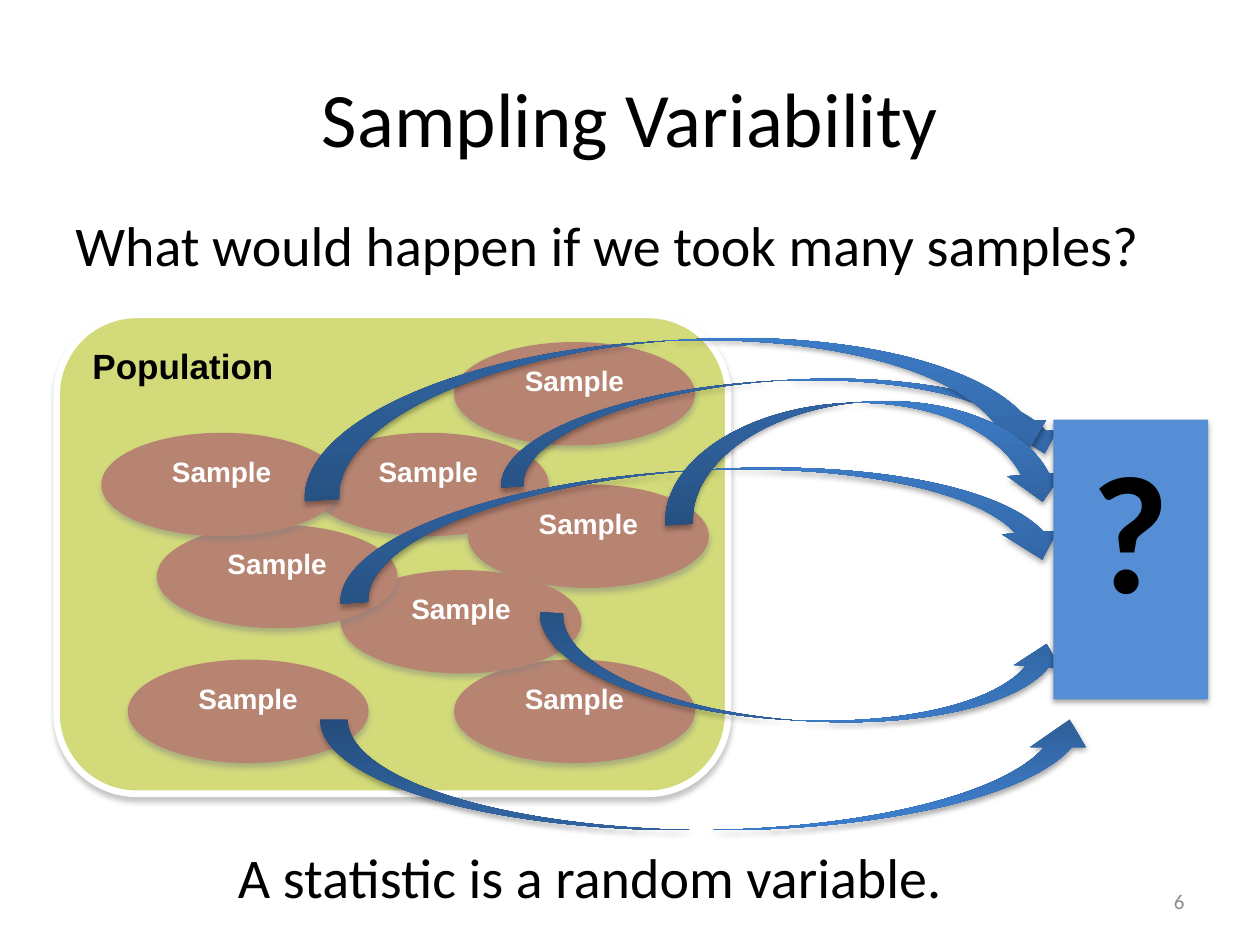
from copy import deepcopy

from lxml.etree import SubElement
from pptx import Presentation
from pptx.dml.color import RGBColor
from pptx.enum.shapes import MSO_SHAPE as SHAPE
from pptx.enum.text import MSO_ANCHOR as ANCHOR, MSO_AUTO_SIZE as AUTO, PP_ALIGN as ALIGN
from pptx.oxml.ns import qn
from pptx.util import Inches, Pt

BLACK, WHITE, CLAY = "000000", "FFFFFF", "B88472"
SOFT_SHADOW = ("808080", 45, 3, 2.4)
DARK_SHADOW = (BLACK, 35, 3.1, 1.8)
ARROW_STOPS = [(0, "2F5F99"), (0.8, "3D7CC7"), (1, "3A7CCB")]
SAMPLES = [(2.45, 3.44), (3.72, 3.85), (3.61, 5.24), (3.61, 2.72),
           (2.71, 4.53), (1.25, 4.17), (1.02, 5.24), (0.81, 3.44)]
ARROWS = [
    ((3.95, 3.02, 4.5, 0.71), -3.6, False),
    ((4.26, 4.99, 4.21, 0.73), 3.6, True),
    ((2.67, 3.73, 5.8, 0.88), -3.6, False),
    ((2.38, 2.7, 6, 1.09), -3.6, False),
    ((2.54, 5.71, 6.17, 0.88), 0, True),
    ((5.25, 3.19, 3.22, 0.88), -3.6, False),
]


def rgb(value):
    return RGBColor.from_string(value)


class Deck:
    """Holds the style and the current slide."""

    def __init__(self, slide, body_font="Calibri", diagram_font="Arial"):
        self.slide = slide
        self.body_font = body_font
        self.diagram_font = diagram_font

    def label(self, sp, text, size, color, font, bold=False, align=ALIGN.LEFT,
              anchor=ANCHOR.TOP, wrap=True):
        tf = sp.text_frame
        tf.word_wrap = wrap
        tf.vertical_anchor = anchor
        p = tf.paragraphs[0]
        p.alignment = align
        r = p.add_run()
        r.text = text
        r.font.name, r.font.size, r.font.bold = font, Pt(size), bold
        r.font.color.rgb = rgb(color)

    def text(self, box, text, size, color=BLACK, **layout):
        sp = self.slide.shapes.add_textbox(*map(Inches, box))
        self.label(sp, text, size, color, self.body_font, **layout)
        return sp

    def shape(self, kind, box, shadow, fill=None, line=None, width=0):
        sp = self.slide.shapes.add_shape(kind, *map(Inches, box))
        if fill:
            sp.fill.solid()
            sp.fill.fore_color.rgb = rgb(fill)
        if line:
            sp.line.color.rgb = rgb(line)
            sp.line.width = Pt(width)
        else:
            sp.line.fill.background()
        self.shadow(sp, *shadow)
        return sp

    def shadow(self, sp, color, alpha, blur, dist):
        sp.shadow.inherit = False
        effects = sp._element.spPr.find(qn("a:effectLst"))
        outer = SubElement(effects, qn("a:outerShdw"), blurRad=str(Pt(blur)),
                           dist=str(Pt(dist)), dir="5400000", rotWithShape="0")
        clr = SubElement(outer, qn("a:srgbClr"), val=color)
        SubElement(clr, qn("a:alpha"), val=str(alpha * 1000))

    def population(self, box):
        sp = self.shape(SHAPE.ROUNDED_RECTANGLE, box, SOFT_SHADOW, "D2DA7A", WHITE, 3.75)
        self.label(sp, "Population", 20, BLACK, self.diagram_font, bold=True)

    def sample(self, x, y):
        sp = self.shape(SHAPE.OVAL, (x, y, 1.9, 0.81), SOFT_SHADOW, CLAY, CLAY, 0.79)
        self.label(sp, "Sample", 16, WHITE, self.diagram_font, bold=True, align=ALIGN.CENTER)

    def arrow(self, box, rotation, flipped):
        sp = self.shape(SHAPE.CURVED_DOWN_ARROW, box, DARK_SHADOW)
        sp.rotation = rotation
        spPr = sp._element.spPr
        if flipped:
            spPr.find(qn("a:xfrm")).set("flipV", "1")
        sp.fill.gradient()
        sp.fill.gradient_angle = 90
        stops = spPr.find(qn("a:gradFill")).find(qn("a:gsLst"))
        stops.append(deepcopy(stops[-1]))
        for stop, (position, color) in zip(sp.fill.gradient_stops, ARROW_STOPS):
            stop.position = position
            stop.color.rgb = rgb(color)

    def unknown(self, box):
        sp = self.shape(SHAPE.RECTANGLE, box, DARK_SHADOW, "558ED5")
        self.label(sp, "?", 96, BLACK, self.body_font, bold=True,
                   align=ALIGN.CENTER, wrap=False)


def main():
    prs = Presentation()
    prs.slide_width, prs.slide_height = Inches(10), Inches(7.5)
    deck = Deck(prs.slides.add_slide(prs.slide_layouts[6]))
    deck.text((0.5, 0.3, 9, 1.25), "Sampling Variability", 44,
              align=ALIGN.CENTER, anchor=ANCHOR.MIDDLE)
    deck.text((0.5, 1.62, 9, 4.95), "What would happen if we took many samples?", 32)
    deck.text((7.17, 6.95, 2.33, 0.4), "6", 12, "8C8C8C",
              align=ALIGN.RIGHT, anchor=ANCHOR.MIDDLE)
    deck.population((0.45, 2.5, 5.33, 3.8))
    for x, y in SAMPLES:
        deck.sample(x, y)
    for box, rotation, flipped in ARROWS:
        deck.arrow(box, rotation, flipped)
    deck.unknown((8.36, 3.33, 1.23, 2.22))
    conclusion = deck.text((1.79, 6.64, 5.86, 0.64), "A statistic is a random variable.",
                           32, wrap=False)
    conclusion.text_frame.auto_size = AUTO.SHAPE_TO_FIT_TEXT
    prs.save("out.pptx")


if __name__ == "__main__":
    main()
